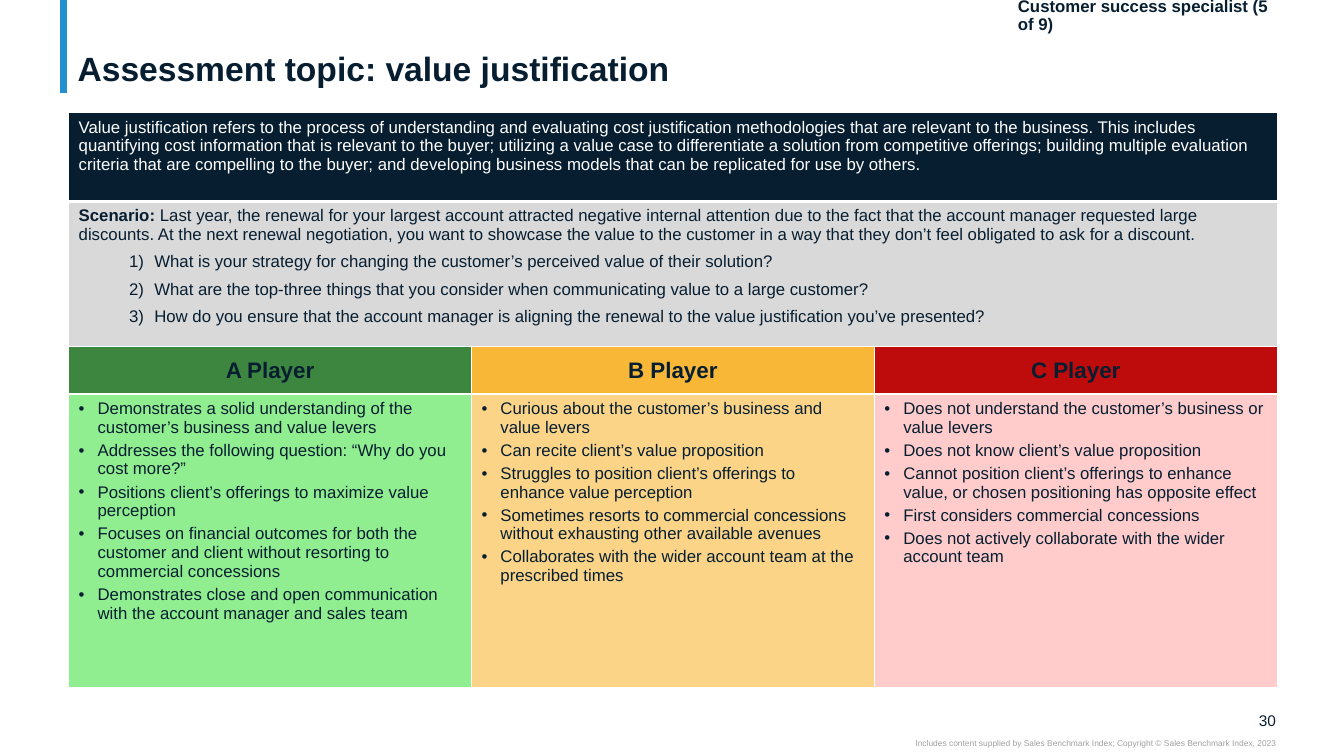
from lxml import etree
from pptx import Presentation
from pptx.dml.color import RGBColor
from pptx.enum import shapes, text
from pptx.oxml.ns import qn
from pptx.util import Pt

TITLE = "Assessment topic: value justification"
TAG = "Customer success specialist (5 of 9)"
PAGE = "30"
COPYRIGHT = "Includes content supplied by Sales Benchmark Index; Copyright © Sales Benchmark Index, 2023"
DEFINITION = (
    "Value justification refers to the process of understanding and evaluating cost justification "
    "methodologies that are relevant to the business. This includes quantifying cost information that is "
    "relevant to the buyer; utilizing a value case to differentiate a solution from competitive offerings; "
    "building multiple evaluation criteria that are compelling to the buyer; and developing business models "
    "that can be replicated for use by others."
)
SCENARIO = (
    "Last year, the renewal for your largest account attracted negative internal attention due to the fact "
    "that the account manager requested large discounts. At the next renewal negotiation, you want to "
    "showcase the value to the customer in a way that they don’t feel obligated to ask for a discount."
)
QUESTIONS = [
    "What is your strategy for changing the customer’s perceived value of their solution?",
    "What are the top-three things that you consider when communicating value to a large customer?",
    "How do you ensure that the account manager is aligning the renewal to the value justification you’ve presented?",
]
PLAYERS = [
    ("A Player", "green", "light_green", [
        "Demonstrates a solid understanding of the customer’s business and value levers",
        "Addresses the following question: “Why do you cost more?”",
        "Positions client’s offerings to maximize value perception",
        "Focuses on financial outcomes for both the customer and client without resorting to commercial concessions",
        "Demonstrates close and open communication with the account manager and sales team",
    ]),
    ("B Player", "amber", "light_amber", [
        "Curious about the customer’s business and value levers",
        "Can recite client’s value proposition",
        "Struggles to position client’s offerings to enhance value perception",
        "Sometimes resorts to commercial concessions without exhausting other available avenues",
        "Collaborates with the wider account team at the prescribed times",
    ]),
    ("C Player", "red", "light_red", [
        "Does not understand the customer’s business or value levers",
        "Does not know client’s value proposition",
        "Cannot position client’s offerings to enhance value, or chosen positioning has opposite effect",
        "First considers commercial concessions",
        "Does not actively collaborate with the wider account team",
    ]),
]
COLORS = {
    "navy": "071E31", "white": "FFFFFF", "blue": "2391CF", "gray": "D9D9D9", "muted": "A0A0A0",
    "green": "3C8640", "light_green": "90EE90", "amber": "F8B737", "light_amber": "FBD487",
    "red": "BE0B0B", "light_red": "FFCCCB",
}
ROW_HEIGHTS = [63.4, 103.7, 33.8, 209.6]
COLUMN_WIDTH = 287.8
LEFT, RIGHT, TABLE_TOP = 49, 911.5, 80.6
HEADING = {"size": Pt(12), "bold": True}
QUESTION_INDENT, BULLET_INDENT = (54, 18), (13.5, 13.5)


def color(name):
    return RGBColor.from_string(COLORS[name])


def assign(target, values):
    for key, value in values.items():
        setattr(target, key, value)


def write(paragraph, wording, ink="navy", **font):
    run = paragraph.add_run()
    run.text = wording
    assign(run.font, {"name": "Arial", "size": Pt(12), "bold": False, **font})
    run.font.color.rgb = color(ink)


def list_mark(paragraph, tag, attributes, indent):
    properties = paragraph._p.get_or_add_pPr()
    margin, hanging = indent
    properties.set("marL", str(Pt(margin)))
    properties.set("indent", str(-Pt(hanging)))
    if tag == "a:buChar":
        etree.SubElement(properties, qn("a:buFont"), typeface="Arial")
    etree.SubElement(properties, qn(tag), attributes)


def place(shape, left, top, width, height):
    assign(shape, {"left": Pt(left), "top": Pt(top), "width": Pt(width), "height": Pt(height)})


def label(shape, wording, box, inset=0, anchor="BOTTOM", align="LEFT", spacing=1.0, ink="navy", **font):
    place(shape, *box)
    frame = shape.text_frame
    assign(frame, {
        "word_wrap": True, "auto_size": text.MSO_AUTO_SIZE.NONE,
        "vertical_anchor": text.MSO_ANCHOR[anchor],
        "margin_left": Pt(inset), "margin_right": Pt(inset), "margin_top": 0, "margin_bottom": 0,
    })
    paragraph = frame.paragraphs[0]
    assign(paragraph, {"alignment": text.PP_ALIGN[align], "line_spacing": spacing})
    write(paragraph, wording, ink, **font)


def border(cell, bottom):
    properties = cell._tc.get_or_add_tcPr()
    for side in "LRTB":
        weight = bottom if side == "B" else 1
        line = etree.SubElement(properties, qn("a:ln" + side), w=str(Pt(weight)))
        fill = etree.SubElement(line, qn("a:solidFill"))
        etree.SubElement(fill, qn("a:srgbClr"), val=COLORS["white"])


def paint(cell, name):
    cell.fill.solid()
    cell.fill.fore_color.rgb = color(name)


def main():
    deck = Presentation()
    assign(deck, {"slide_width": Pt(960), "slide_height": Pt(540)})
    slide = deck.slides.add_slide(deck.slide_layouts[5])

    accent = slide.shapes.add_connector(shapes.MSO_CONNECTOR.STRAIGHT, Pt(45.4), 0, Pt(45.4), Pt(66.4))
    accent.line.color.rgb = color("blue")
    accent.line.width = Pt(5)
    etree.SubElement(accent._element.spPr, qn("a:effectLst"))

    def text_box():
        return slide.shapes.add_textbox(0, 0, 0, 0)

    label(slide.shapes.title, TITLE, (48.2, 2.9, 863.3, 60.5), 7.2, spacing=0.9, size=Pt(24), bold=True)
    label(text_box(), TAG, (720, 2.9, 200.9, 21.6), 7.2, spacing=0.9, **HEADING)
    label(text_box(), PAGE, (RIGHT - 24, 507.6, 24, 13.7), anchor="MIDDLE", align="RIGHT", size=Pt(11))
    label(text_box(), COPYRIGHT, (RIGHT - 371.5, 527, 371.5, 7.2), anchor="TOP", align="RIGHT",
          ink="muted", size=Pt(6))

    table = slide.shapes.add_table(len(ROW_HEIGHTS), len(PLAYERS), Pt(LEFT), Pt(TABLE_TOP),
                                   Pt(COLUMN_WIDTH * len(PLAYERS)), Pt(sum(ROW_HEIGHTS))).table
    assign(table, {"first_row": False, "horz_banding": False})
    for column in table.columns:
        column.width = Pt(COLUMN_WIDTH)
    for index, height in enumerate(ROW_HEIGHTS):
        table.rows[index].height = Pt(height)
        for cell in table.rows[index].cells:
            border(cell, 3 if index == 0 else 1)

    definition, scenario = table.cell(0, 0), table.cell(1, 0)
    for index, (band, fill) in enumerate([(definition, "navy"), (scenario, "gray")]):
        band.merge(table.cell(index, len(PLAYERS) - 1))
        paint(band, fill)
        band.text_frame.paragraphs[0].space_after = Pt(6)
    write(definition.text_frame.paragraphs[0], DEFINITION, "white")
    write(scenario.text_frame.paragraphs[0], "Scenario: ", bold=True)
    write(scenario.text_frame.paragraphs[0], SCENARIO)
    for question in QUESTIONS:
        paragraph = scenario.text_frame.add_paragraph()
        paragraph.level = 1
        list_mark(paragraph, "a:buAutoNum", {"type": "arabicParenR"}, QUESTION_INDENT)
        paragraph.space_after = Pt(6)
        write(paragraph, question)

    for column, (player, header_fill, body_fill, traits) in enumerate(PLAYERS):
        header, body = table.cell(2, column), table.cell(3, column)
        paint(header, header_fill)
        paint(body, body_fill)
        header.vertical_anchor = text.MSO_ANCHOR.MIDDLE
        header.text_frame.paragraphs[0].alignment = text.PP_ALIGN.CENTER
        write(header.text_frame.paragraphs[0], player, size=Pt(16), bold=True)
        for index, trait in enumerate(traits):
            paragraph = body.text_frame.add_paragraph() if index else body.text_frame.paragraphs[0]
            list_mark(paragraph, "a:buChar", {"char": "•"}, BULLET_INDENT)
            if index:
                paragraph.space_before = Pt(3)
            write(paragraph, trait)

    deck.save("out.pptx")


if __name__ == "__main__":
    main()
